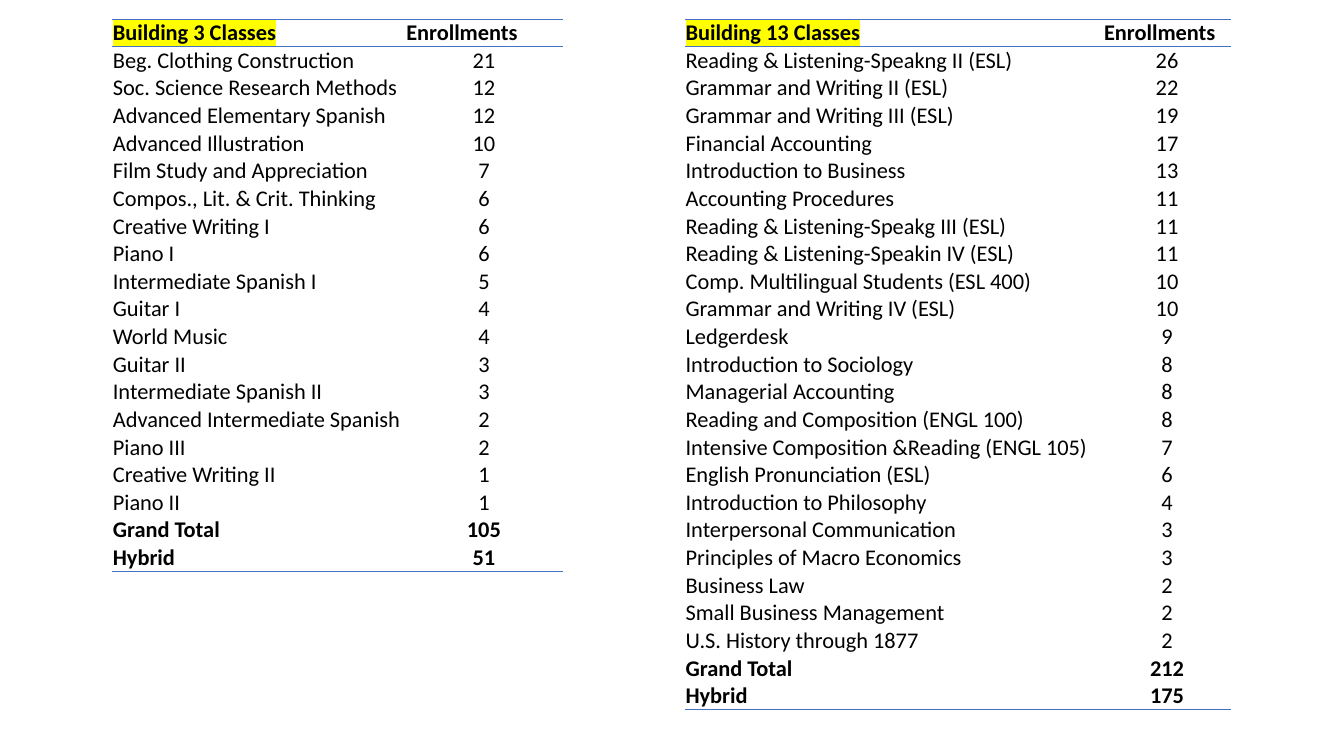
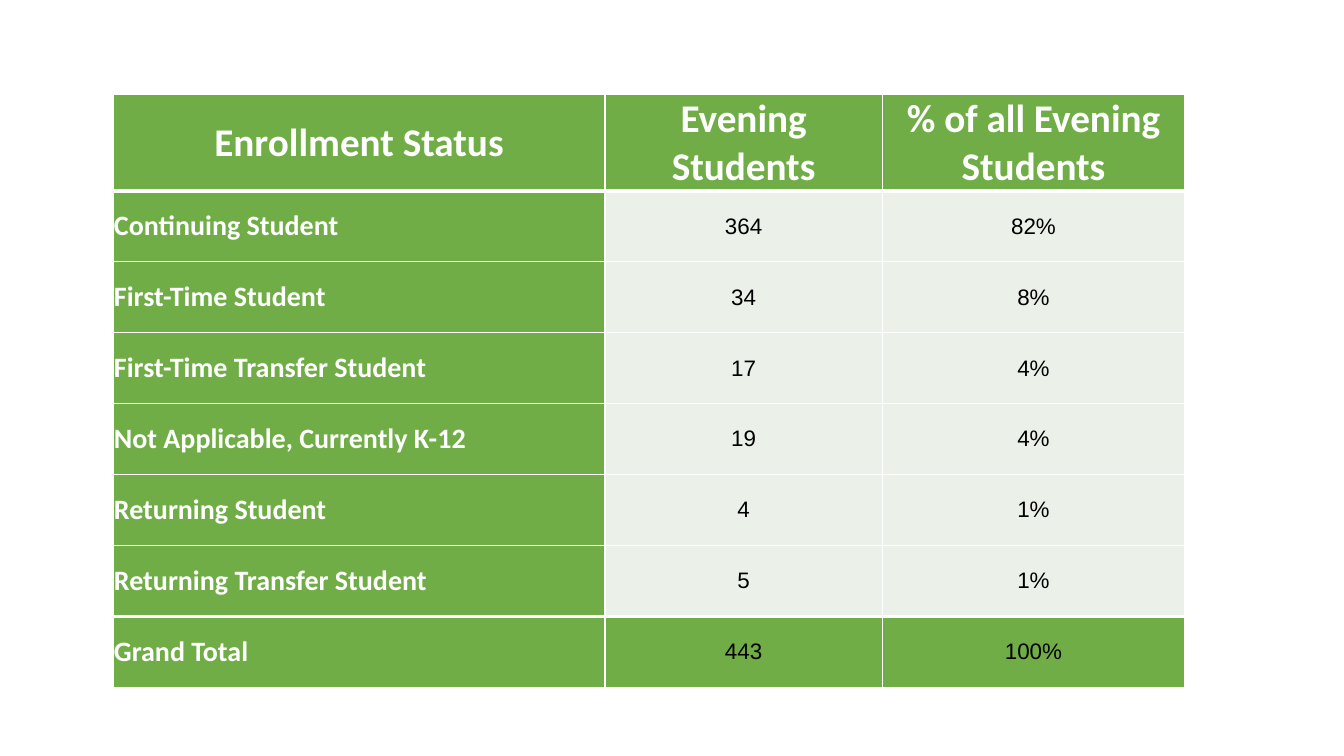
import pptx
import pptx.dml.color
import pptx.enum.text
import pptx.oxml.ns
import pptx.util
import lxml.etree

Inches, Pt = pptx.util.Inches, pptx.util.Pt
ANCHOR, ALIGN = pptx.enum.text.MSO_ANCHOR, pptx.enum.text.PP_ALIGN
qn = pptx.oxml.ns.qn

BLACK, WHITE, YELLOW = "000000", "FFFFFF", "FFFF00"
BLUE, GREEN, PALE = "4472C4", "70AD47", "EBF1E9"
NO_STYLE = "{2D5ABB26-0587-4C30-8999-92F81FD0307C}"
CLASS_ROW = 0.27
STATUS_HEIGHT, STATUS_HEADER = 5.88, 0.95

BUILDING_3 = [
    ("Building 3 Classes", "Enrollments"),
    ("Beg. Clothing Construction", "21"),
    ("Soc. Science Research Methods", "12"),
    ("Advanced Elementary Spanish", "12"),
    ("Advanced Illustration", "10"),
    ("Film Study and Appreciation", "7"),
    ("Compos., Lit. & Crit. Thinking", "6"),
    ("Creative Writing I", "6"),
    ("Piano I", "6"),
    ("Intermediate Spanish I", "5"),
    ("Guitar I", "4"),
    ("World Music", "4"),
    ("Guitar II", "3"),
    ("Intermediate Spanish II", "3"),
    ("Advanced Intermediate Spanish", "2"),
    ("Piano III", "2"),
    ("Creative Writing II", "1"),
    ("Piano II", "1"),
    ("Grand Total", "105"),
    ("Hybrid", "51"),
]
BUILDING_13 = [
    ("Building 13 Classes", "Enrollments"),
    ("Reading & Listening-Speakng II (ESL)", "26"),
    ("Grammar and Writing II (ESL)", "22"),
    ("Grammar and Writing III (ESL)", "19"),
    ("Financial Accounting", "17"),
    ("Introduction to Business", "13"),
    ("Accounting Procedures", "11"),
    ("Reading & Listening-Speakg III (ESL)", "11"),
    ("Reading & Listening-Speakin IV (ESL)", "11"),
    ("Comp. Multilingual Students (ESL 400)", "10"),
    ("Grammar and Writing IV (ESL)", "10"),
    ("Ledgerdesk", "9"),
    ("Introduction to Sociology", "8"),
    ("Managerial Accounting", "8"),
    ("Reading and Composition (ENGL 100)", "8"),
    ("Intensive Composition &Reading (ENGL 105)", "7"),
    ("English Pronunciation (ESL)", "6"),
    ("Introduction to Philosophy", "4"),
    ("Interpersonal Communication", "3"),
    ("Principles of Macro Economics", "3"),
    ("Business Law", "2"),
    ("Small Business Management", "2"),
    ("U.S. History through 1877", "2"),
    ("Grand Total", "212"),
    ("Hybrid", "175"),
]
STATUS = [
    ("Enrollment Status", "Evening Students", "% of all Evening Students"),
    ("Continuing Student", "364", "82%"),
    ("First-Time Student", "34", "8%"),
    ("First-Time Transfer Student", "17", "4%"),
    ("Not Applicable, Currently K-12", "19", "4%"),
    ("Returning Student", "4", "1%"),
    ("Returning Transfer Student", "5", "1%"),
    ("Grand Total", "443", "100%"),
]


def rgb(color):
    return pptx.dml.color.RGBColor.from_string(color)


def write(cell, text, size=16, font="Calibri", color=BLACK, bold=False,
          centered=False, anchor=ANCHOR.BOTTOM, highlight=None):
    cell.margin_left = cell.margin_right = Inches(0.01)
    cell.margin_top, cell.margin_bottom = Pt(0.17), 0
    cell.vertical_anchor = anchor
    p = cell.text_frame.paragraphs[0]
    p.alignment = ALIGN.CENTER if centered else ALIGN.LEFT
    r = p.add_run()
    r.text = text
    r.font.size, r.font.bold, r.font.name = Pt(size), bold, font
    r.font.color.rgb = rgb(color)
    if highlight:
        mark = lxml.etree.Element(qn("a:highlight"))
        lxml.etree.SubElement(mark, qn("a:srgbClr"), val=highlight)
        r.font._element.find(qn("a:solidFill")).addnext(mark)


def set_borders(cell, color, **widths):
    """Draw the sides L, R, T and B that have a width in points; call before filling."""
    tcPr = cell._tc.get_or_add_tcPr()
    for side in "LRTB":
        if side in widths:
            ln = lxml.etree.SubElement(tcPr, qn("a:ln" + side), w=str(Pt(widths[side])))
            fill = lxml.etree.SubElement(ln, qn("a:solidFill"))
            lxml.etree.SubElement(fill, qn("a:srgbClr"), val=color)


def set_fill(cell, color):
    cell.fill.solid()
    cell.fill.fore_color.rgb = rgb(color)


def add_plain_table(slide, left, top, widths, heights):
    """Add a table without a built-in style."""
    frame = slide.shapes.add_table(len(heights), len(widths), Inches(left), Inches(top),
                                   Inches(sum(widths)), Inches(sum(heights)))
    table = frame.table
    table.first_row = table.horz_banding = False
    table._tbl.tblPr.find(qn("a:tableStyleId")).text = NO_STYLE
    for column, width in zip(table.columns, widths):
        column.width = Inches(width)
    for row, height in zip(table.rows, heights):
        row.height = Inches(height)
    return table


def add_class_table(slide, left, top, widths, rows):
    table = add_plain_table(slide, left, top, widths, [CLASS_ROW] * len(rows))
    last = len(rows) - 1
    for i, row in enumerate(rows):
        for j, text in enumerate(row):
            cell = table.cell(i, j)
            write(cell, text, bold=i in (0, last - 1, last), centered=i > 0 and j > 0,
                  highlight=YELLOW if i == j == 0 else None)
            if i == 0:
                set_borders(cell, BLUE, T=1, B=1)
            elif i == last:
                set_borders(cell, BLUE, B=1)


def add_status_table(slide, left, top, widths, heights, rows):
    table = add_plain_table(slide, left, top, widths, heights)
    last = len(rows) - 1
    for i, row in enumerate(rows):
        for j, text in enumerate(row):
            cell = table.cell(i, j)
            if i == 0:
                style = dict(size=28, color=WHITE, bold=True)
            elif j == 0:
                style = dict(size=20, color=WHITE, bold=True)
            else:
                style = dict(font="Arial")
            write(cell, text, centered=i == 0 or j > 0, anchor=ANCHOR.MIDDLE, **style)
            sides = dict(L=1, R=1, T=3 if i == last else 1, B=3 if i == 0 else 1)
            if i == 1:
                del sides["T"]
            elif i == last - 1:
                del sides["B"]
            set_borders(cell, WHITE, **sides)
            set_fill(cell, GREEN if i in (0, last) or j == 0 else PALE)


def main():
    prs = pptx.Presentation()
    prs.slide_width, prs.slide_height = Inches(13.33), Inches(7.5)
    blank = prs.slide_layouts[6]

    slide = prs.slides.add_slide(blank)
    add_class_table(slide, 1.11, 0.19, [2.91, 1.56], BUILDING_3)
    add_class_table(slide, 6.79, 0.19, [4.15, 1.27], BUILDING_13)

    slide = prs.slides.add_slide(blank)
    body_rows = len(STATUS) - 1
    heights = [STATUS_HEADER] + [(STATUS_HEIGHT - STATUS_HEADER) / body_rows] * body_rows
    add_status_table(slide, 1.12, 0.94, [4.88, 2.75, 3], heights, STATUS)

    prs.save("out.pptx")


if __name__ == "__main__":
    main()
